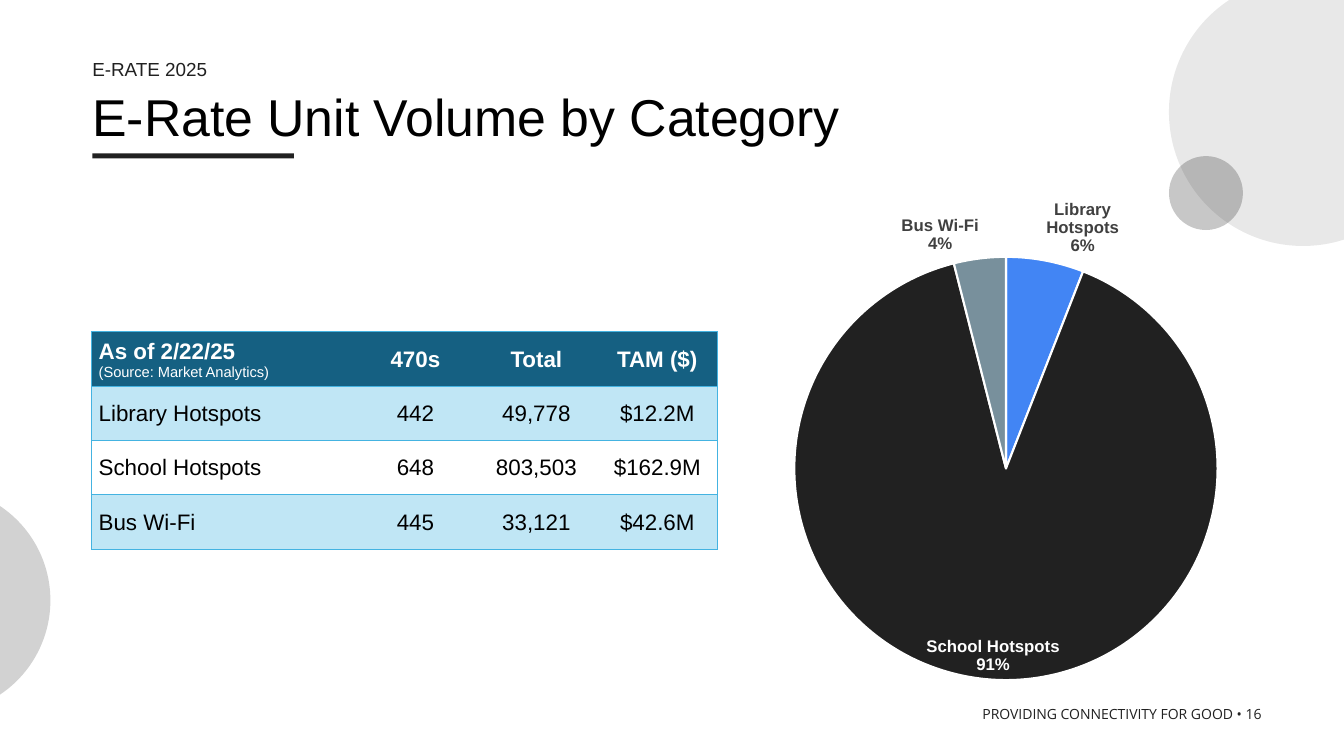
from lxml.etree import SubElement
from pptx import Presentation
from pptx.chart.data import CategoryChartData
from pptx.dml.color import RGBColor
from pptx.enum.chart import XL_CHART_TYPE, XL_LABEL_POSITION
from pptx.enum.shapes import MSO_SHAPE
from pptx.enum.text import MSO_ANCHOR, PP_ALIGN
from pptx.oxml import parse_xml
from pptx.oxml.ns import nsdecls, qn
from pptx.util import Pt

COLORS = {
    "ink": "212121", "black": "000000", "white": "FFFFFF", "gray": "404040",
    "head": "156082", "band": "C0E6F5", "rule": "44B3E1",
    "blue": "4285F4", "slate": "78909C",
}
ROWS = [
    ["As of 2/22/25\n(Source: Market Analytics)", "470s", "Total", "TAM ($)"],
    ["Library Hotspots", "442", "49,778", "$12.2M"],
    ["School Hotspots", "648", "803,503", "$162.9M"],
    ["Bus Wi-Fi", "445", "33,121", "$42.6M"],
]
SHARES = {"Library Hotspots": 6, "School Hotspots": 91, "Bus Wi-Fi": 4}


def tint(name):
    return RGBColor.from_string(COLORS[name])


def style(font, size, color, face="Arial", bold=False):
    font.size, font.name, font.bold = Pt(size), face, bold
    font.color.rgb = tint(color)


def write(frame, text, sizes=(16,), color="black", face="Arial", bolds=(False,),
          align=PP_ALIGN.LEFT, space=None):
    for i, line in enumerate(text.split("\n")):
        para = frame.paragraphs[0] if i == 0 else frame.add_paragraph()
        para.alignment = align
        if space:
            para.line_spacing = space
        run = para.add_run()
        run.text = line
        style(run.font, sizes[i], color, face, bolds[i])


class Deck:
    def __init__(self, width, height):
        self.file = Presentation()
        self.file.slide_width, self.file.slide_height = Pt(width), Pt(height)
        self.slide = self.file.slides.add_slide(self.file.slide_layouts[6])
        self.shapes = self.slide.shapes

    def shape(self, kind, box, color, alpha=100):
        shape = self.shapes.add_shape(kind, *map(Pt, box))
        shape.shadow.inherit = False
        shape.line.fill.background()
        shape.fill.solid()
        shape.fill.fore_color.rgb = tint(color)
        if alpha < 100:
            fill = shape.fill._xPr.find(qn("a:solidFill"))
            SubElement(fill[0], qn("a:alpha"), val=str(alpha * 1000))

    def text(self, box, text, anchor=MSO_ANCHOR.TOP, side=0, **form):
        frame = self.shapes.add_textbox(*map(Pt, box)).text_frame
        frame.word_wrap = True
        frame.vertical_anchor = anchor
        frame.margin_left = frame.margin_right = Pt(side)
        write(frame, text, **form)

    def edge(self, cell, side, shown):
        fill = "<a:noFill/>"
        if shown:
            fill = f'<a:solidFill><a:srgbClr val="{COLORS["rule"]}"/></a:solidFill>'
        line = f'<a:ln{side} {nsdecls("a")} w="{Pt(0.75)}">{fill}</a:ln{side}>'
        cell._tc.get_or_add_tcPr().append(parse_xml(line))

    def table(self, left, top, widths, height, rows):
        box = (left, top, sum(widths), height * len(rows))
        table = self.shapes.add_table(len(rows), len(widths), *map(Pt, box)).table
        table.first_row = table.horz_banding = False
        for col, width in zip(table.columns, widths):
            col.width = Pt(width)
        last = len(widths) - 1
        for r, row in enumerate(rows):
            table.rows[r].height = Pt(height)
            for c, text in enumerate(row):
                cell = table.cell(r, c)
                cell.vertical_anchor = MSO_ANCHOR.MIDDLE
                cell.margin_left = Pt(5 if c == 0 else 0.75)
                cell.margin_right = cell.margin_top = Pt(0.75)
                cell.margin_bottom = 0
                for side, shown in zip("LRTB", (c == 0, c == last, True, True)):
                    self.edge(cell, side, shown)
                cell.fill.solid()
                shade = "head" if r == 0 else "band" if r % 2 else "white"
                cell.fill.fore_color.rgb = tint(shade)
                write(cell.text_frame, text, sizes=(16, 10.5), bolds=(r == 0, False),
                      color="black" if r else "white",
                      align=PP_ALIGN.CENTER if c else PP_ALIGN.LEFT)

    def pie(self, box, shares, colors, plot, inner):
        data = CategoryChartData()
        data.categories = list(shares)
        data.add_series("Series 1", list(shares.values()))
        chart = self.shapes.add_chart(XL_CHART_TYPE.PIE, *map(Pt, box), data).chart
        chart.has_legend = chart.has_title = False
        style(chart.font, 10, "black")
        pie = chart.plots[0]
        pie.vary_by_categories = True
        wedges = pie.series[0]
        labels = wedges.data_labels
        labels.show_category_name = labels.show_percentage = True
        labels.show_value = False
        labels.position = XL_LABEL_POSITION.OUTSIDE_END
        style(labels.font, 12, "gray", bold=True)
        gap = parse_xml(f'<c:separator {nsdecls("c")}>\n</c:separator>')
        labels._element.find(qn("c:showBubbleSize")).addnext(gap)
        for i, color in enumerate(colors):
            form = wedges.points[i].format
            form.fill.solid()
            form.fill.fore_color.rgb = tint(color)
            form.line.color.rgb = tint("white")
            form.line.width = Pt(1.5)
        label = wedges.points[inner].data_label
        name = list(shares)[inner]
        write(label.text_frame, f"{name}\n{shares[name]}%", sizes=(12, 12),
              color="white", bolds=(True, True), align=PP_ALIGN.CENTER)
        label.position = XL_LABEL_POSITION.INSIDE_END
        parts = "".join(f'<c:{key} val="{val}"/>' for key, val in plot.items())
        area = chart._chartSpace.chart.plotArea
        old = area.find(qn("c:layout"))
        if old is not None:
            area.remove(old)
        area.insert(0, parse_xml(
            f'<c:layout {nsdecls("c")}><c:manualLayout><c:layoutTarget val="inner"/>'
            f'<c:xMode val="edge"/><c:yMode val="edge"/>{parts}'
            '</c:manualLayout></c:layout>'))


def main():
    deck = Deck(960, 540)
    deck.shape(MSO_SHAPE.RECTANGLE, (66, 109.5, 144, 3.75), "ink")
    for left, top, size, alpha in [
        (835, 111.5, 52.8, 25), (835, -15.8, 191.5, 10), (-126, 347.8, 162, 20),
    ]:
        deck.shape(MSO_SHAPE.OVAL, (left, top, size, size), "ink", alpha)
    deck.text((668, 495.5, 240, 28.8), "PROVIDING CONNECTIVITY FOR GOOD • 16",
              anchor=MSO_ANCHOR.MIDDLE, side=7.2, sizes=(10,), color="ink",
              face="Open Sans", align=PP_ALIGN.RIGHT)
    deck.text((66, 62, 828, 46.8), "E-Rate Unit Volume by Category",
              anchor=MSO_ANCHOR.BOTTOM, sizes=(37,), space=0.9)
    deck.table(65.5, 237, [188, 86.4, 86.4, 86.4], 38.8, ROWS)
    deck.pie((513.4, 132.5, 410.4, 364.3), SHARES, ["blue", "ink", "slate"],
             {"x": 0.13, "y": 0.14, "w": 0.74, "h": 0.83}, inner=1)
    deck.text((66, 41, 797, 20.2), "E-RATE 2025", sizes=(13.5,), color="ink", space=0.8)
    deck.file.save("out.pptx")


if __name__ == "__main__":
    main()
